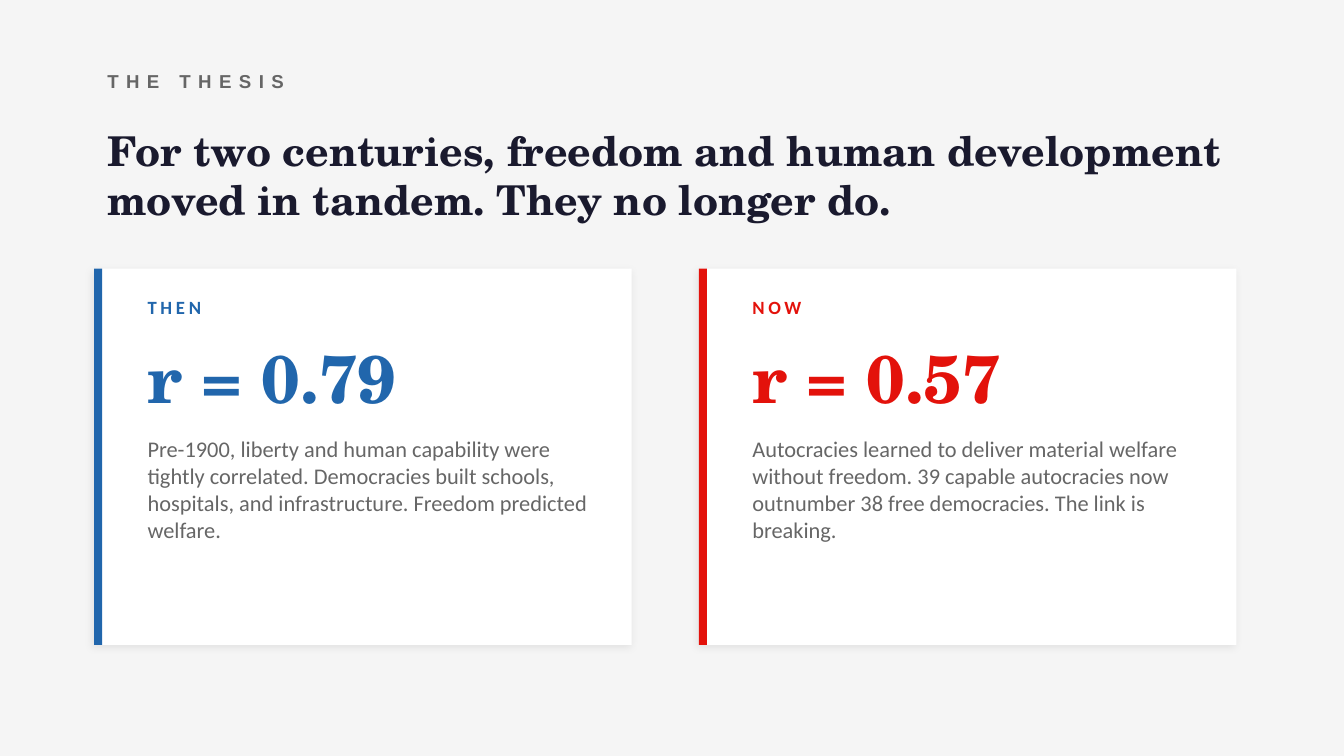
from dataclasses import dataclass

from lxml import etree
from pptx import Presentation
from pptx.dml.color import RGBColor
from pptx.enum.shapes import MSO_SHAPE
from pptx.enum.text import MSO_ANCHOR, MSO_AUTO_SIZE, PP_ALIGN
from pptx.oxml.ns import qn
from pptx.util import Inches, Pt

RECT = MSO_SHAPE.RECTANGLE
MIDDLE = MSO_ANCHOR.MIDDLE
LEFT = PP_ALIGN.LEFT
FIXED = MSO_AUTO_SIZE.NONE


@dataclass(frozen=True)
class Theme:
    page: str = "F5F5F5"
    card: str = "FFFFFF"
    ink: str = "1A1A2E"
    gray: str = "666666"
    blue: str = "2166AC"
    red: str = "E3120B"
    serif: str = "TeX Gyre Schola"
    sans: str = "Calibri"
    plain: str = "Arial"
    label: int = 10
    body: int = 12
    title: int = 22
    stat: int = 36
    gap: float = 9.75


T = Theme()

deck = Presentation()
deck.slide_width, deck.slide_height = Inches(10), Inches(5.625)
UNIT = deck.slide_width // 100  # a square grid, 100 columns wide


def grid(*cells):
    return [round(cell * UNIT) for cell in cells]


def write(frame, text, font, size, color, bold=True, track=0, before=0):
    """Fill the empty first paragraph, or add one below the others."""
    para = frame.paragraphs[0] if not frame.text else frame.add_paragraph()
    para.alignment = LEFT
    if before:
        para.space_before = Pt(before)
    run = para.add_run()
    run.text = text
    run.font.name, run.font.size, run.font.bold = font, Pt(size), bold
    run.font.color.rgb = RGBColor.from_string(color)
    if track:
        run._r.get_or_add_rPr().set("spc", str(track * 100))


slide = deck.slides.add_slide(deck.slide_layouts[5])
slide.background.fill.solid()
slide.background.fill.fore_color.rgb = RGBColor.from_string(T.page)

# Heading
label = slide.shapes.add_textbox(*grid(7, 4, 80, 4)).text_frame
label.word_wrap = True
label.vertical_anchor = MIDDLE
write(label, "THE THESIS", T.plain, T.label, T.gray, track=4)

title = slide.shapes.title
title.left, title.top, title.width, title.height = grid(7, 9, 85, 8)
head = title.text_frame
head.auto_size = FIXED
head.word_wrap = True
head.vertical_anchor = MIDDLE
write(head, "For two centuries, freedom and human development moved in tandem. "
      "They no longer do.", T.serif, T.title, T.ink)

# Cards
CARDS = [
    ("THEN", "r = 0.79", T.blue,
     "Pre-1900, liberty and human capability were tightly correlated. "
     "Democracies built schools, hospitals, and infrastructure. "
     "Freedom predicted welfare."),
    ("NOW", "r = 0.57", T.red,
     "Autocracies learned to deliver material welfare without freedom. "
     "39 capable autocracies now outnumber 38 free democracies. "
     "The link is breaking."),
]
TOP, WIDE, HIGH, STEP = 20, 40, 28, 45

for index, (era, stat, color, note) in enumerate(CARDS):
    left = 7 + index * STEP
    for width, fill in ((WIDE, T.card), (0.6, color)):
        shape = slide.shapes.add_shape(RECT, *grid(left, TOP, width, HIGH))
        shape.shadow.inherit = False
        shape.fill.solid()
        shape.fill.fore_color.rgb = RGBColor.from_string(fill)
        shape.line.fill.background()
        if fill == T.card:
            effect = shape._element.spPr.find(qn("a:effectLst"))
            shade = etree.SubElement(
                effect, qn("a:outerShdw"), blurRad=str(Pt(4)),
                dist=str(Pt(1.5)), dir=str(135 * 60000),
                algn="bl", rotWithShape="0")
            tint = etree.SubElement(shade, qn("a:srgbClr"), val="000000")
            etree.SubElement(tint, qn("a:alpha"), val="8000")

    text = slide.shapes.add_textbox(
        *grid(left + 3, TOP + 1.5, WIDE - 5, HIGH - 3)).text_frame
    text.word_wrap = True
    write(text, era, T.sans, T.label, color, track=2)
    write(text, stat, T.serif, T.stat, color, before=T.gap)
    write(text, note, T.sans, T.body, T.gray, bold=False, before=T.gap)

deck.save("out.pptx")
